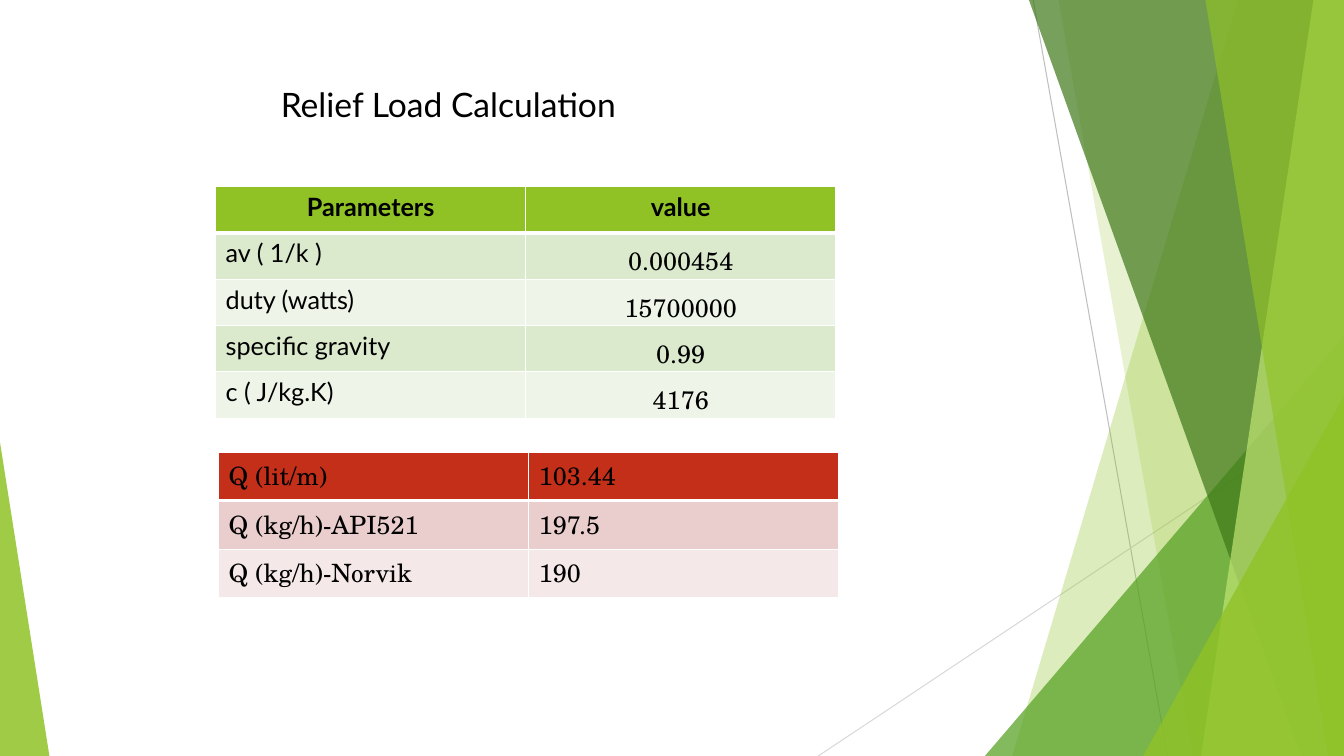
from dataclasses import dataclass
from lxml.etree import SubElement
from pptx import Presentation
from pptx.dml.color import RGBColor
from pptx.enum.shapes import MSO_CONNECTOR, MSO_SHAPE
from pptx.enum.text import MSO_ANCHOR, PP_ALIGN
from pptx.oxml import parse_xml
from pptx.oxml.ns import nsdecls, qn
from pptx.util import Pt


@dataclass(frozen=True)
class Theme:
    sans: str = "Lato"
    serif: str = "TeX Gyre Schola"
    title_size: float = 24
    body_size: float = 18
    text: str = "000000"
    white: str = "FFFFFF"
    lime: str = "90C226"
    pale_lime: str = "C0E474"
    green: str = "54A021"
    dark_green: str = "3F7819"
    grey: str = "BFBFBF"
    light_grey: str = "D9D9D9"
    green_rows: tuple = ("90C226", "DBE9CD", "EEF4E8")
    red_rows: tuple = ("C42F1A", "EACDCD", "F5E8E8")


@dataclass(frozen=True)
class Box:
    x: float
    y: float
    w: float
    h: float


T = Theme()


def write(tf, text, font=T.sans, size=T.body_size, color=T.text, bold=False,
          align=PP_ALIGN.LEFT):
    p = tf.paragraphs[0]
    p.alignment = align
    r = p.add_run()
    r.text = text
    r.font.name, r.font.size, r.font.bold = font, Pt(size), bold
    r.font.color.rgb = RGBColor.from_string(color)


def paint(sp, color, opacity):
    """Flat translucent fill without outline or shadow."""
    sp.shadow.inherit = False
    sp.line.fill.background()
    sp.fill.solid()
    sp.fill.fore_color.rgb = RGBColor.from_string(color)
    clr = sp.element.spPr.find(qn("a:solidFill")).find(qn("a:srgbClr"))
    SubElement(clr, qn("a:alpha")).set("val", str(opacity * 1000))


def add_line(s, box, start, end, color):
    (x1, y1), (x2, y2) = start, end
    cn = s.shapes.add_connector(MSO_CONNECTOR.STRAIGHT, Pt(box.x + x1), Pt(box.y + y1),
                                Pt(box.x + x2), Pt(box.y + y2))
    cn.line.color.rgb = RGBColor.from_string(color)
    cn.line.width = Pt(0.75)
    SubElement(cn.element.spPr, qn("a:effectLst"))


def add_band(s, box, top, bottom, color, opacity):
    """Full-height band from a slanted left edge to the right of the box."""
    right, low = Pt(box.x + box.w), Pt(box.y + box.h)
    fb = s.shapes.build_freeform(Pt(box.x + top), Pt(box.y), scale=1.0)
    fb.add_line_segments([(right, Pt(box.y)), (right, low), (Pt(box.x + bottom), low)])
    paint(fb.convert_to_shape(), color, opacity)


def add_wedge(s, box, left, w, h, apex, color, opacity):
    """Right triangle standing on the bottom of the box."""
    sp = s.shapes.add_shape(MSO_SHAPE.ISOSCELES_TRIANGLE, Pt(box.x + left),
                            Pt(box.y + box.h - h), Pt(w), Pt(h))
    sp.adjustments[0] = apex
    paint(sp, color, opacity)


def add_facets(s, box):
    # Thin lines
    add_line(s, box, (738, 0), (834, box.h), T.grey)
    add_line(s, box, (box.w, 290), (584.5, box.h), T.light_grey)
    # Bands and wedges, back to front
    add_band(s, box, 884.2, 723, T.lime, 30)
    add_band(s, box, 756, 852, T.lime, 20)
    add_wedge(s, box, box.w - 256.5, 256.5, 300, 1, T.green, 72)
    add_band(s, box, 735, 929.5, T.dark_green, 70)
    add_band(s, box, 938.2, 858, T.pale_lime, 70)
    add_band(s, box, 861, 949, T.lime, 65)
    add_wedge(s, box, box.w - 143.5, 143.5, 257, 1, T.lime, 80)
    add_wedge(s, box, 0, 35.3, 224, 0, T.lime, 85)


def add_title(s, box, text):
    tf = s.shapes.add_textbox(Pt(box.x), Pt(box.y), Pt(box.w), Pt(box.h)).text_frame
    tf.word_wrap = True
    tf.vertical_anchor = MSO_ANCHOR.MIDDLE
    write(tf, text, size=T.title_size)


def set_borders(cell, top, bottom):
    widths = {"lnL": 1, "lnR": 1, "lnT": top, "lnB": bottom}
    for i, (side, width) in enumerate(widths.items()):
        cell._tc.get_or_add_tcPr().insert(i, parse_xml(
            f'<a:{side} {nsdecls("a")} w="{Pt(width)}"><a:solidFill>'
            f'<a:srgbClr val="{T.white}"/></a:solidFill></a:{side}>'))


def add_grid(s, box, rows, fills, style):
    """Two-column table; style(cell, row, col) returns the text format."""
    tbl = s.shapes.add_table(len(rows), 2, Pt(box.x), Pt(box.y), Pt(box.w), Pt(box.h)).table
    tbl.first_row = tbl.horz_banding = False
    for i, row in enumerate(rows):
        tbl.rows[i].height = Pt(box.h / len(rows))
        for j, text in enumerate(row):
            cell = tbl.cell(i, j)
            cell.fill.solid()
            shade = fills[0] if i == 0 else fills[2 - i % 2]
            cell.fill.fore_color.rgb = RGBColor.from_string(shade)
            set_borders(cell, top=3 if i == 1 else 1, bottom=3 if i == 0 else 1)
            write(cell.text_frame, text, **style(cell, i, j))


def parameter_style(cell, row, col):
    if row == 0:
        return {"bold": True, "align": PP_ALIGN.CENTER}
    if col == 0:
        return {}
    cell.vertical_anchor = MSO_ANCHOR.BOTTOM
    cell.margin_left = cell.margin_right = cell.margin_top = Pt(0.75)
    cell.margin_bottom = 0
    return {"font": T.serif, "align": PP_ALIGN.CENTER}


def result_style(cell, row, col):
    return {"font": T.serif}


def relief_load_slide(prs, box):
    s = prs.slides.add_slide(prs.slide_layouts[6])
    add_facets(s, box)
    add_title(s, Box(box.x + 193.5, box.y + 54, 400, 40), "Relief Load Calculation")
    # Input parameters
    add_grid(s, Box(box.x + 154, box.y + 133.3, 443, 165.5), [
        ("Parameters", "value"),
        ("av ( 1/k )", "0.000454"),
        ("duty (watts)", "15700000"),
        ("specific gravity", "0.99"),
        ("c ( J/kg.K)", "4176"),
    ], T.green_rows, parameter_style)
    # Resulting flow rates
    add_grid(s, Box(box.x + 156.2, box.y + 322.8, 443, 104.4), [
        ("Q (lit/m)", "103.44"),
        ("Q (kg/h)-API521", "197.5"),
        ("Q (kg/h)-Norvik", "190"),
    ], T.red_rows, result_style)


def main():
    prs = Presentation()
    prs.slide_width, prs.slide_height = Pt(960), Pt(540)
    relief_load_slide(prs, Box(0, 0, 960, 540))
    prs.save("out.pptx")


if __name__ == "__main__":
    main()
